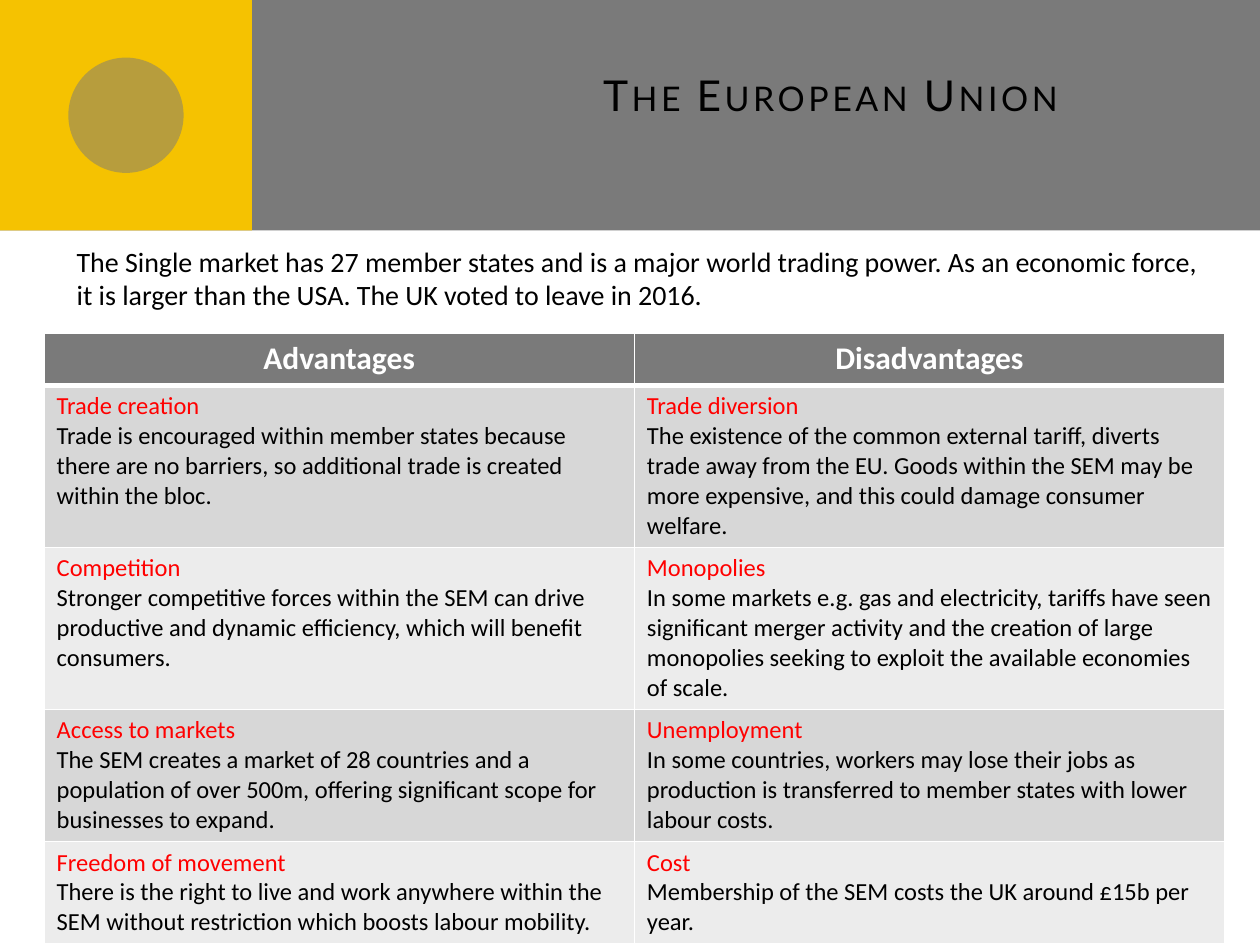
"""Build the slide on the pros and cons of the European Union."""
from lxml.etree import SubElement as Sub
from pptx import Presentation
from pptx.dml.color import RGBColor as RGB
from pptx.enum.shapes import MSO_SHAPE as Kind
from pptx.enum.text import MSO_ANCHOR as Anchor, PP_ALIGN as Align
from pptx.oxml.ns import qn
from pptx.util import Inches, Pt

theme = dict(
    gray="7A7A7A", gold="F5C201", dark="D7D7D7", pale="ECECEC",
    white="FFFFFF", black="000000", red="FF0000",
    title=24.3, intro=16, head=18, body=14,
    font="Calibri", display="Lato",
)
rows = [
    (5, ("Trade creation", "Trade is encouraged within member states because there are no barriers, "
         "so additional trade is created within the bloc."),
        ("Trade diversion", "The existence of the common external tariff, diverts trade away from the EU. "
         "Goods within the SEM may be more expensive, and this could damage consumer welfare.")),
    (5, ("Competition", "Stronger competitive forces within the SEM can drive productive and dynamic "
         "efficiency, which will benefit consumers."),
        ("Monopolies", "In some markets e.g. gas and electricity, tariffs have seen significant merger "
         "activity and the creation of large monopolies seeking to exploit the available economies of scale.")),
    (4, ("Access to markets", "The SEM creates a market of 28 countries and a population of over 500m, "
         "offering significant scope for businesses to expand."),
        ("Unemployment", "In some countries, workers may lose their jobs as production is transferred "
         "to member states with lower labour costs.")),
    (3, ("Freedom of movement", "There is the right to live and work anywhere within the SEM without "
         "restriction which boosts labour mobility."),
        ("Cost", "Membership of the SEM costs the UK around £15b per year.")),
]

deck = Presentation()
deck.slide_width, deck.slide_height = Inches(10), Inches(7.5)
wide, high = deck.slide_width, deck.slide_height
slide = deck.slides.add_slide(deck.slide_layouts[6])
shapes = slide.shapes


def write(para, text, size, color, font="font", bold=False):
    run = para.add_run()
    run.text = text
    run.font.name, run.font.size, run.font.bold = theme[font], Pt(theme[size]), bold
    run.font.color.rgb = RGB.from_string(theme[color])
    return run


def style(cell, color, top, base):
    cell.fill.solid()
    cell.fill.fore_color.rgb = RGB.from_string(theme[color])
    props = cell._tc.get_or_add_tcPr()
    for spot, (side, size) in enumerate((("L", 1), ("R", 1), ("T", top), ("B", base))):
        line = Sub(props, qn(f"a:ln{side}"), w=str(Pt(size)))
        Sub(Sub(line, qn("a:solidFill")), qn("a:srgbClr"), val=theme["white"])
        props.insert(spot, line)


# banner
band = 0.244 * high
disc = 0.5 * band
side = 0.2 * wide
for kind, left, top, width, height, color in (
    (Kind.RECTANGLE, 0, 0, wide, band, "gray"),
    (Kind.RECTANGLE, 0, 0, side, band, "gold"),
    (Kind.OVAL, (side - disc) / 2, (band - disc) / 2, disc, disc, "gray"),
):
    shape = shapes.add_shape(kind, int(left), int(top), int(width), int(height))
    shape.shadow.inherit = False
    shape.fill.solid()
    shape.fill.fore_color.rgb = RGB.from_string(theme[color])
    shape.line.fill.background()
tint = shape._element.spPr.find(qn("a:solidFill"))[0]
Sub(tint, qn("a:alpha"), val="50000")

box = shapes.add_textbox(int(0.267 * wide), int(high / 30), int(0.683 * wide), int(high / 6))
frame = box.text_frame
frame.word_wrap = True
frame.vertical_anchor = Anchor.MIDDLE
frame.margin_right, frame.margin_bottom = int(0.06 * wide), int(0.04 * high)
para = frame.paragraphs[0]
para.alignment = Align.RIGHT
props = write(para, "The European Union", "title", "black", "display").font._element
props.set("cap", "small")
props.set("spc", "200")

box = shapes.add_textbox(int(0.051 * wide), int(0.252 * high), int(0.921 * wide), int(0.129 * high))
box.text_frame.word_wrap = True
write(box.text_frame.paragraphs[0],
      "The Single market has 27 member states and is a major world trading power. "
      "As an economic force, it is larger than the USA. The UK voted to leave in 2016.",
      "intro", "black")

pad, step = Inches(0.1), Pt(1.22 * theme["body"])
sizes = [Inches(0.41)] + [pad + count * step for count, *_ in rows]
grid = shapes.add_table(len(sizes), 2, int(0.035 * wide), int(0.353 * high),
                        int(0.937 * wide), sum(sizes)).table
for row, size in zip(grid.rows, sizes):
    row.height = size
for col, text in enumerate(("Advantages", "Disadvantages")):
    cell = grid.cell(0, col)
    style(cell, "gray", 1, 3)
    para = cell.text_frame.paragraphs[0]
    para.alignment = Align.CENTER
    write(para, text, "head", "white", bold=True)
for row, (count, *pair) in enumerate(rows, 1):
    for col, (name, text) in enumerate(pair):
        cell = grid.cell(row, col)
        style(cell, "dark" if row % 2 else "pale", 3 if row == 1 else 1, 1)
        frame = cell.text_frame
        write(frame.paragraphs[0], name, "body", "red")
        write(frame.add_paragraph(), text, "body", "black")

deck.save("out.pptx")
